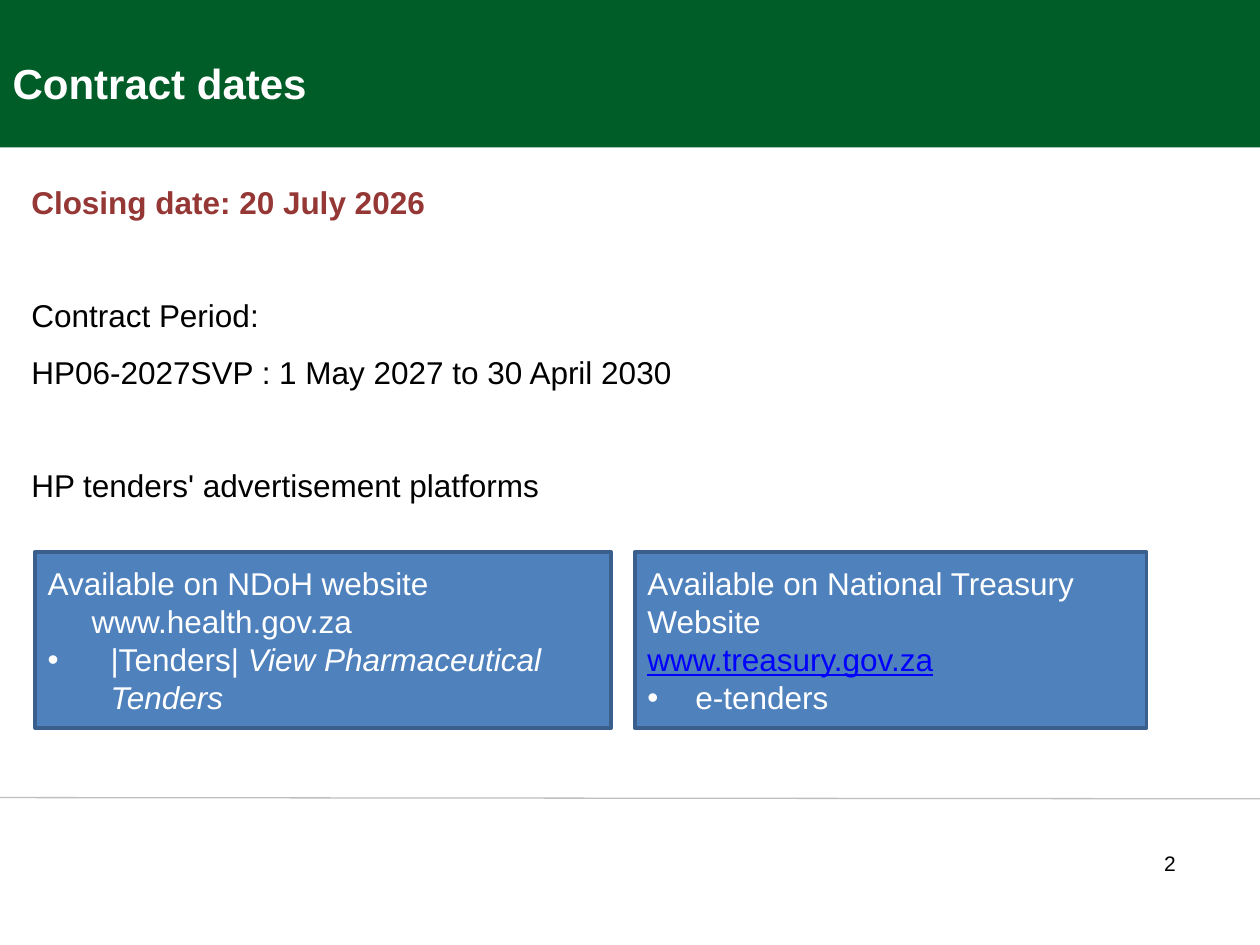
from lxml import etree
from pptx import Presentation
from pptx import util as u
from pptx.dml.color import RGBColor
from pptx.enum import shapes, text
from pptx.oxml.ns import qn


def colour(value):
    return RGBColor.from_string(value)


def style(span, size, shade, bold=False):
    span.font.name = "Arial"
    span.font.size = u.Pt(size)
    span.font.bold = bold
    span.font.color.rgb = colour(shade)


deck = Presentation()
deck.slide_width, deck.slide_height = u.Inches(10), u.Inches(7.5)
page = deck.slides.add_slide(deck.slide_layouts[5])

title = page.shapes.title
title.left, title.top = u.Inches(0), u.Inches(0)
title.width, title.height = u.Inches(6.08), u.Inches(0.91)
title.text_frame.text = "Contract dates"
title.text_frame.auto_size = text.MSO_AUTO_SIZE.NONE
title.text_frame.vertical_anchor = text.MSO_ANCHOR.BOTTOM
para = title.text_frame.paragraphs[0]
para.alignment = text.PP_ALIGN.LEFT
style(para.runs[0], 24, "FFFFFF", True)

band = page.shapes.add_shape(
    shapes.MSO_SHAPE.RECTANGLE, 0, 0, u.Inches(10), u.Inches(1.17))
band.shadow.inherit = False
band.fill.solid()
band.fill.fore_color.rgb = colour("005D28")
band.line.fill.background()
title.element.addprevious(band.element)

rule = page.shapes.add_connector(
    shapes.MSO_CONNECTOR.STRAIGHT, 0, u.Inches(6.33), u.Inches(10), u.Inches(6.34))
rule.line.color.rgb = colour("BFBFBF")
rule.line.width = u.Pt(0.75)
etree.SubElement(rule.element.spPr, qn("a:effectLst"))

dates = page.shapes.add_textbox(
    u.Inches(0.15), u.Inches(1.25), u.Inches(9.79), u.Inches(3.23))
dates.text_frame.word_wrap = True
dates.text_frame.text = "\n".join([
    "Closing date: 20 July 2026",
    "Contract Period:",
    "HP06-2027SVP : 1 May 2027 to 30 April 2030",
    "HP tenders' advertisement platforms",
])
line_height = u.Pt(32.4)
for index, para in enumerate(dates.text_frame.paragraphs):
    para.line_spacing = line_height
    if index in (1, 3):
        para.space_before = line_height
    closing = index == 0
    style(para.runs[0], 18, "953735" if closing else "000000", closing)

number = page.shapes.add_textbox(
    u.Inches(8.83), u.Inches(6.7), u.Inches(0.6), u.Inches(0.3))
number.text_frame.text = "2"
para = number.text_frame.paragraphs[0]
para.alignment = text.PP_ALIGN.RIGHT
style(para.runs[0], 12, "000000")

platforms = [
    (0.28, 4.57, [
        (0, False, ["Available on NDoH website"]),
        (0.35, False, ["www.health.gov.za"]),
        (0.5, True, ["|Tenders| ", "View Pharmaceutical Tenders"]),
    ]),
    (5.04, 4.06, [
        (0, False, ["Available on National Treasury Website"]),
        (0, False, ["www.treasury.gov.za"]),
        (0.38, True, ["e-tenders"]),
    ]),
]
for left, width, lines in platforms:
    box = page.shapes.add_shape(
        shapes.MSO_SHAPE.RECTANGLE,
        u.Inches(left), u.Inches(4.38), u.Inches(width), u.Inches(1.4))
    box.shadow.inherit = False
    box.fill.solid()
    box.fill.fore_color.rgb = colour("4F81BD")
    box.line.color.rgb = colour("3A5F8C")
    box.line.width = u.Pt(2)
    frame = box.text_frame
    frame.word_wrap = True
    frame.vertical_anchor = text.MSO_ANCHOR.MIDDLE
    for index, (indent, bulleted, words) in enumerate(lines):
        para = frame.add_paragraph() if index else frame.paragraphs[0]
        para.alignment = text.PP_ALIGN.LEFT
        para.line_spacing = u.Pt(21.7)
        properties = para._p.get_or_add_pPr()
        properties.set("marL", str(u.Inches(indent)))
        properties.set("indent", str(-u.Inches(indent) if bulleted else 0))
        if bulleted:
            etree.SubElement(properties, qn("a:buFont"), typeface="Arial")
            etree.SubElement(properties, qn("a:buChar"), char="•")
        for wording in words:
            span = para.add_run()
            span.text = wording
            style(span, 18, "FFFFFF")
            if wording.startswith("View"):
                span.font.italic = True
            if wording == "www.treasury.gov.za":
                span.font.underline = True
                span.font.color.rgb = colour("0000FF")

deck.save("out.pptx")
